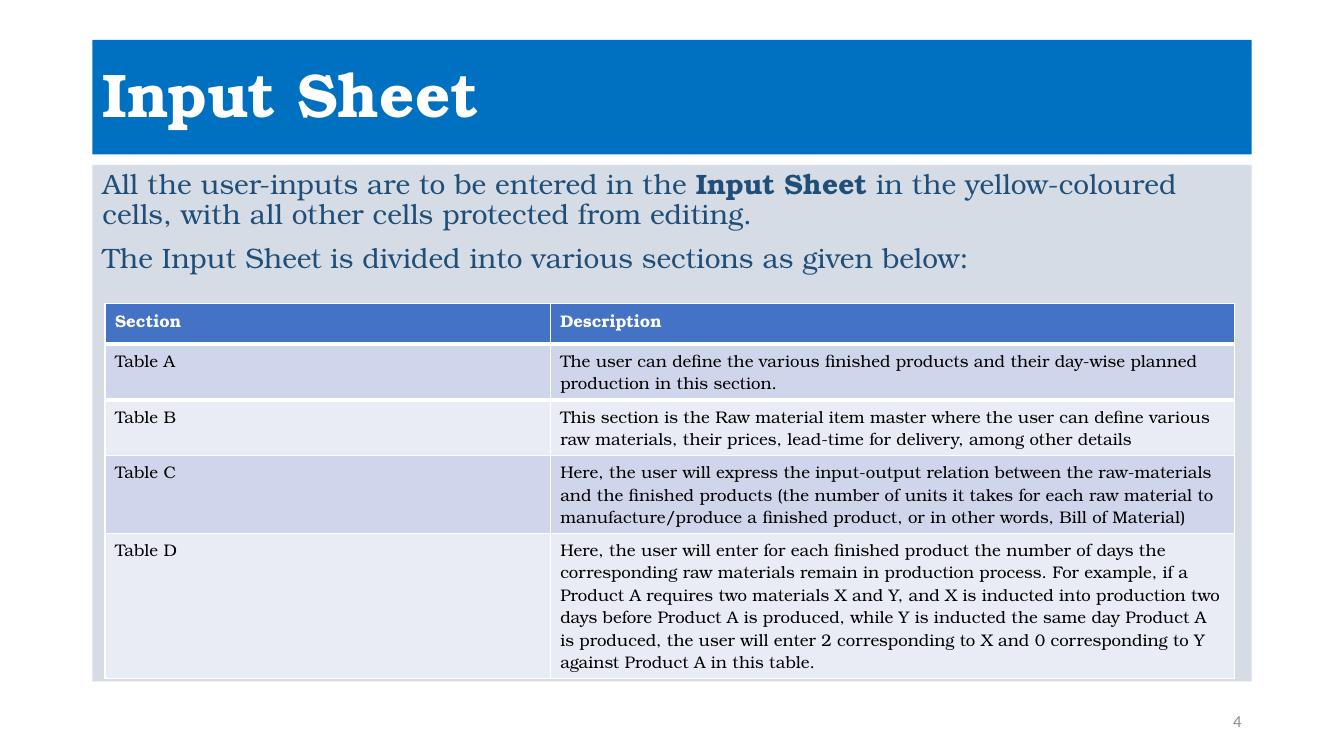
from dataclasses import dataclass

from lxml.etree import Element, SubElement
from pptx import Presentation
from pptx.dml.color import RGBColor
from pptx.enum.text import MSO_ANCHOR as Anchor, MSO_AUTO_SIZE as AutoSize, PP_ALIGN as Align
from pptx.oxml.ns import qn
from pptx.util import Emu, Pt

TITLE = "Input Sheet"
INTRO = [
    [("All the user-inputs are to be entered in the ", False),
     ("Input Sheet", True),
     (" in the yellow-coloured cells, with all other cells protected from editing.", False)],
    [("The Input Sheet is divided into various sections as given below:", False)],
]
SECTIONS = [
    ("Section", "Description"),
    ("Table A", "The user can define the various finished products and their day-wise "
                "planned production in this section."),
    ("Table B", "This section is the Raw material item master where the user can define "
                "various raw materials, their prices, lead-time for delivery, among other details"),
    ("Table C", "Here, the user will express the input-output relation between the "
                "raw-materials and the finished products (the number of units it takes for each "
                "raw material to manufacture/produce a finished product, or in other words, "
                "Bill of Material)"),
    ("Table D", "Here, the user will enter for each finished product the number of days the "
                "corresponding raw materials remain in production process. For example, if a "
                "Product A requires two materials X and Y, and X is inducted into production two "
                "days before Product A is produced, while Y is inducted the same day Product A is "
                "produced, the user will enter 2 corresponding to X and 0 corresponding to Y "
                "against Product A in this table."),
]
PAGE = "4"

PX = 9525
SLIDE = (1280, 720)
TITLE_BOX = (88, 38, 1104, 109)
BODY_BOX = (88, 157, 1104, 492)
PAGE_BOX = (904, 667, 288, 38)
TABLE_AT = (100, 289)
COLUMNS = (424, 652)
ROWS = (39, 53, 53, 74, 138)


@dataclass(frozen=True)
class Theme:
    font: str = "TeX Gyre Bonum"
    page_font: str = "Calibri"
    title_size: int = 44
    body_size: int = 20
    small_size: int = 12
    header_line: int = 3
    white: str = "FFFFFF"
    black: str = "000000"
    title_fill: str = "0070C0"
    body_fill: str = "D6DCE5"
    body_text: str = "1F4E79"
    page_text: str = "8C8C8C"
    header_fill: str = "4472C4"
    bands: tuple = ("CFD5EA", "E9EBF5")


T = Theme()


def px(*lengths):
    return [Emu(n * PX) for n in lengths]


def fill(target, color):
    target.fill.solid()
    target.fill.fore_color.rgb = RGBColor.from_string(color)


def add_run(p, text, size, color, bold=False, font=T.font):
    r = p.add_run()
    r.text = text
    r.font.name, r.font.size, r.font.bold = font, Pt(size), bold
    r.font.color.rgb = RGBColor.from_string(color)


def place(sp, box, color, anchor):
    """Move and fill a placeholder, and return its text frame."""
    sp.left, sp.top, sp.width, sp.height = px(*box)
    fill(sp, color)
    tf = sp.text_frame
    tf.auto_size, tf.word_wrap, tf.vertical_anchor = AutoSize.NONE, True, anchor
    return tf


def add_title(s):
    p = place(s.shapes.title, TITLE_BOX, T.title_fill, Anchor.MIDDLE).paragraphs[0]
    p.alignment, p.line_spacing = Align.LEFT, 0.9
    add_run(p, TITLE, T.title_size, T.white, True)


def add_intro(s):
    tf = place(s.placeholders[1], BODY_BOX, T.body_fill, Anchor.TOP)
    for i, runs in enumerate(INTRO):
        p = tf.add_paragraph() if i else tf.paragraphs[0]
        p.line_spacing, p.space_before = 0.9, Pt(10)
        pPr = p._p.get_or_add_pPr()
        pPr.set("marL", "0")
        pPr.set("indent", "0")
        SubElement(pPr, qn("a:buNone"))
        for text, bold in runs:
            add_run(p, text, T.body_size, T.body_text, bold)


def add_border(cell, side):
    """Draw the thick header rule on one side of a cell: a:lnT or a:lnB."""
    ln = Element(qn(side), w=str(Pt(T.header_line)))
    SubElement(SubElement(ln, qn("a:solidFill")), qn("a:srgbClr"), val=T.white)
    cell._tc.get_or_add_tcPr().insert(0, ln)


def add_sections(s):
    size = (sum(COLUMNS), sum(ROWS))
    table = s.shapes.add_table(len(ROWS), len(COLUMNS), *px(*TABLE_AT, *size)).table
    for column, width in zip(table.columns, px(*COLUMNS)):
        column.width = width
    for i, (row, height, texts) in enumerate(zip(table.rows, px(*ROWS), SECTIONS)):
        row.height = height
        header = i == 0
        for cell, text in zip(row.cells, texts):
            fill(cell, T.header_fill if header else T.bands[(i - 1) % 2])
            if i < 2:
                add_border(cell, "a:lnB" if header else "a:lnT")
            add_run(cell.text_frame.paragraphs[0], text, T.small_size,
                    T.white if header else T.black, header)


def add_page_number(s):
    tf = s.shapes.add_textbox(*px(*PAGE_BOX)).text_frame
    tf.word_wrap, tf.vertical_anchor = True, Anchor.MIDDLE
    p = tf.paragraphs[0]
    p.alignment = Align.RIGHT
    add_run(p, PAGE, T.small_size, T.page_text, font=T.page_font)


def main():
    prs = Presentation()
    prs.slide_width, prs.slide_height = px(*SLIDE)
    s = prs.slides.add_slide(prs.slide_layouts[1])
    add_title(s)
    add_intro(s)
    add_page_number(s)
    add_sections(s)
    prs.save("out.pptx")


if __name__ == "__main__":
    main()
